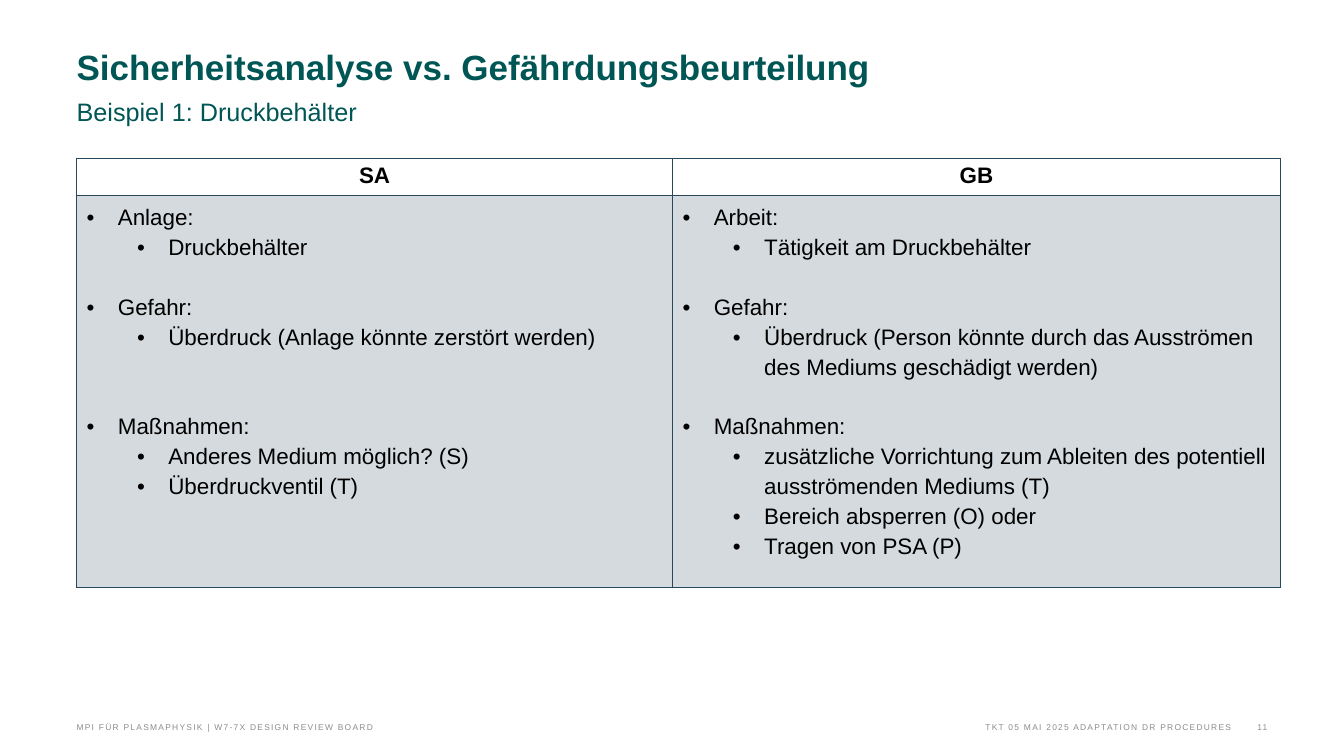
import pptx
import pptx.util
import pptx.dml.color
import pptx.enum.text
import pptx.oxml
import pptx.oxml.ns

Inches = pptx.util.Inches
Pt = pptx.util.Pt
RGBColor = pptx.dml.color.RGBColor
PP_ALIGN = pptx.enum.text.PP_ALIGN
MSO_ANCHOR = pptx.enum.text.MSO_ANCHOR
qn = pptx.oxml.ns.qn

GREEN = RGBColor(0x00, 0x55, 0x55)
GRAY = RGBColor(0x8C, 0x8C, 0x8C)
NAVY = RGBColor(0x29, 0x48, 0x5D)
BLACK = RGBColor(0x00, 0x00, 0x00)

LEFT = 0.76
LINE_GAP = 21.4
COLUMNS = [
    ("SA", 5.91, [
        ("Anlage:", ["Druckbehälter"], 0),
        ("Gefahr:", ["Überdruck (Anlage könnte zerstört werden)"], 1),
        ("Maßnahmen:", ["Anderes Medium möglich? (S)", "Überdruckventil (T)"], 2),
    ]),
    ("GB", 6.03, [
        ("Arbeit:", ["Tätigkeit am Druckbehälter"], 0),
        ("Gefahr:", ["Überdruck (Person könnte durch das Ausströmen "
                     "des Mediums geschädigt werden)"], 1),
        ("Maßnahmen:", ["zusätzliche Vorrichtung zum Ableiten des potentiell "
                        "ausströmenden Mediums (T)",
                        "Bereich absperren (O) oder", "Tragen von PSA (P)"], 1),
    ]),
]
ROW_HEIGHTS = [0.37, 3.89]
FOOTERS = [
    ("TKT 05 MAI 2025 ADAPTATION DR PROCEDURES", 4.51, 7.7, PP_ALIGN.RIGHT),
    ("MPI FÜR PLASMAPHYSIK | W7-7X DESIGN REVIEW BOARD", LEFT, 6.66, PP_ALIGN.LEFT),
    ("11", 12.21, 0.36, PP_ALIGN.RIGHT),
]


class SlideBuilder:
    font = "Arial"

    def __init__(self, prs):
        self.s = prs.slides.add_slide(prs.slide_layouts[5])

    def run(self, p, text, size, color, bold=False):
        r = p.add_run()
        r.text = text
        r.font.name = self.font
        r.font.size = Pt(size)
        r.font.bold = bold
        r.font.color.rgb = color
        return r

    def frame(self, sp, anchor):
        tf = sp.text_frame
        tf.word_wrap = True
        tf.auto_size = pptx.enum.text.MSO_AUTO_SIZE.NONE
        tf.vertical_anchor = anchor
        tf.margin_left = tf.margin_right = tf.margin_top = tf.margin_bottom = 0
        return tf.paragraphs[0]

    def title(self, heading, subheading):
        sp = self.s.shapes.title
        sp.left, sp.top = Inches(LEFT), Inches(0.48)
        sp.width, sp.height = Inches(10.47), Inches(0.98)
        p = self.frame(sp, MSO_ANCHOR.TOP)
        p.alignment = PP_ALIGN.LEFT
        p.line_spacing = Pt(28)
        p.space_after = Pt(18)
        self.run(p, heading, 25, GREEN, True)
        p.add_line_break()
        self.run(p, subheading, 18, GREEN)

    def footer(self, text, left, width, align):
        sp = self.s.shapes.add_textbox(Inches(left), Inches(7.1), Inches(width), Inches(0.16))
        p = self.frame(sp, MSO_ANCHOR.BOTTOM)
        p.alignment = align
        r = self.run(p, text, 6, GRAY)
        r.font._element.set("spc", "90")

    def borders(self, cell):
        tcPr = cell._tc.get_or_add_tcPr()
        for side in ("lnL", "lnR", "lnT", "lnB"):
            tcPr.append(pptx.oxml.parse_xml(
                f'<a:{side} xmlns:a="http://schemas.openxmlformats.org/drawingml/2006/main" '
                f'w="{Pt(1)}"><a:solidFill><a:srgbClr val="{NAVY}"/></a:solidFill></a:{side}>'))

    def tint(self, cell):
        cell.fill.solid()
        cell.fill.fore_color.rgb = NAVY
        color = cell._tc.tcPr.find(qn("a:solidFill")).find(qn("a:srgbClr"))
        color.makeelement(qn("a:alpha"), {"val": "20000"})
        color.append(color.makeelement(qn("a:alpha"), {"val": "20000"}))

    def bullet(self, p, text, level, gap):
        p.level = level
        p.line_spacing = 1.2
        if gap:
            p.space_before = Pt(gap * LINE_GAP)
        pPr = p._p.get_or_add_pPr()
        pPr.set("marL", str(Inches(0.31 + 0.5 * level)))
        pPr.set("indent", str(Inches(-0.31)))
        pPr.append(pPr.makeelement(qn("a:buFont"), {"typeface": self.font}))
        pPr.append(pPr.makeelement(qn("a:buChar"), {"char": "•"}))
        self.run(p, text, 16, BLACK)

    def table(self, columns):
        width = sum(w for _, w, _ in columns)
        tbl = self.s.shapes.add_table(2, len(columns), Inches(LEFT), Inches(1.57),
                                      Inches(width), Inches(sum(ROW_HEIGHTS))).table
        tbl.first_row = tbl.horz_banding = False
        for row, height in zip(tbl.rows, ROW_HEIGHTS):
            row.height = Inches(height)
        for i, (heading, col_width, groups) in enumerate(columns):
            tbl.columns[i].width = Inches(col_width)
            head, body = tbl.cell(0, i), tbl.cell(1, i)
            self.borders(head)
            self.borders(body)
            head.fill.background()
            self.tint(body)
            p = head.text_frame.paragraphs[0]
            p.alignment = PP_ALIGN.CENTER
            self.run(p, heading, 16, BLACK, True)
            lines = []
            for label, items, gap in groups:
                lines.append((label, 0, gap))
                lines.extend((item, 1, 0) for item in items)
            tf = body.text_frame
            for n, line in enumerate(lines):
                self.bullet(tf.add_paragraph() if n else tf.paragraphs[0], *line)


def main():
    prs = pptx.Presentation()
    prs.slide_width, prs.slide_height = Inches(13.33), Inches(7.5)
    slide = SlideBuilder(prs)
    slide.title("Sicherheitsanalyse vs. Gefährdungsbeurteilung", "Beispiel 1: Druckbehälter")
    for entry in FOOTERS:
        slide.footer(*entry)
    slide.table(COLUMNS)
    prs.save("out.pptx")


if __name__ == "__main__":
    main()
